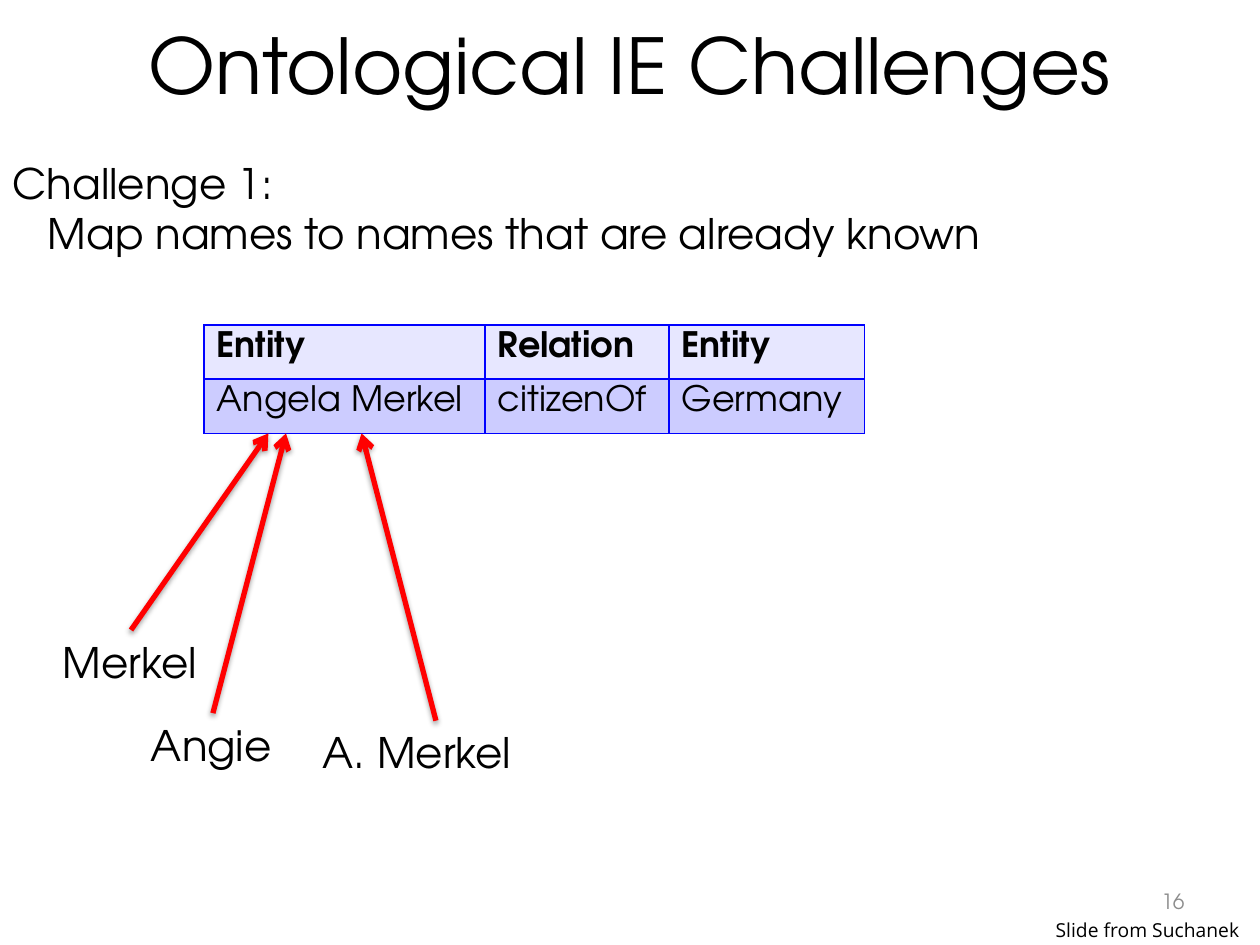
"""Build the slide about mapping names to known entities."""
from dataclasses import dataclass

from lxml.etree import SubElement
from pptx import Presentation
from pptx.dml.color import RGBColor
from pptx.enum.shapes import MSO_CONNECTOR as Connector
from pptx.enum.text import MSO_ANCHOR as Anchor, PP_ALIGN as Align
from pptx.oxml import parse_xml
from pptx.oxml.ns import nsdecls, qn
from pptx.util import Inches, Pt

BLACK = RGBColor(0x00, 0x00, 0x00)
GRAY = RGBColor(0x8C, 0x8C, 0x8C)
RED = RGBColor(0xFF, 0x00, 0x00)
BORDER_BLUE = RGBColor(0x00, 0x01, 0xFF)
HEADER_FILL = RGBColor(0xE7, 0xE7, 0xFF)
BODY_FILL = RGBColor(0xCC, 0xCC, 0xFF)
MAIN_FONT = "TeX Gyre Adventor"
CREDIT_FONT = "Open Sans"

ROWS = [("Entity", "Relation", "Entity"), ("Angela Merkel", "citizenOf", "Germany")]
COLUMN_WIDTHS = [2.23, 1.46, 1.55]
ROW_HEIGHT = 0.43
TABLE_LEFT, TABLE_TOP = 1.62, 2.58
ARROW_TIP_TOP = 3.44


@dataclass
class Label:
    text: str
    left: float
    top: float
    width: float
    height: float = 0.5
    size: int = 24
    font: str = MAIN_FONT
    color: RGBColor = BLACK
    align: Align = Align.LEFT
    anchor: Anchor = Anchor.TOP
    wrap: bool = False


@dataclass
class Arrow:
    start_x: float
    start_y: float
    tip_x: float


LABELS = [
    Label("A. Merkel", 2.46, 5.72, 2, wrap=True),
    Label("Angie", 1.1, 5.66, 1.17),
    Label("Merkel", 0.4, 5, 1.29),
    Label("16", 7.17, 6.95, 2.33, 0.4, 12, color=GRAY,
          align=Align.RIGHT, anchor=Anchor.MIDDLE, wrap=True),
    Label("Slide from Suchanek", 8.28, 7.24, 1.72, 0.29, 11, CREDIT_FONT),
]
ARROWS = [Arrow(3.46, 5.72, 2.87), Arrow(1.69, 5.66, 2.27), Arrow(1.04, 5, 2.13)]


def format_text(text_frame, size: int, font: str = MAIN_FONT,
                color: RGBColor = BLACK, bold: bool = False) -> None:
    for paragraph in text_frame.paragraphs:
        for run in paragraph.runs:
            run.font.size = Pt(size)
            run.font.name = font
            run.font.color.rgb = color
            run.font.bold = bold


def place(shape, left: float, top: float, width: float, height: float) -> None:
    shape.left, shape.top = Inches(left), Inches(top)
    shape.width, shape.height = Inches(width), Inches(height)


def fill_title(slide) -> None:
    title = slide.shapes.title
    place(title, 0.5, 0, 9, 1.01)
    title.text_frame.text = "Ontological IE Challenges"
    title.text_frame.vertical_anchor = Anchor.MIDDLE
    format_text(title.text_frame, 44)


def fill_challenge(slide) -> None:
    body = slide.placeholders[1]
    place(body, 0, 1.2, 10, 0.91)
    body.text_frame.text = "Challenge 1:\nMap names to names that are already known"
    for paragraph, margin in zip(body.text_frame.paragraphs, (0, 0.28)):
        paragraph.space_before = Pt(0)
        properties = paragraph._p.get_or_add_pPr()
        properties.set("marL", str(Inches(margin)))
        properties.set("indent", "0")
        SubElement(properties, qn("a:buNone"))
    format_text(body.text_frame, 24)


def add_borders(cell) -> None:
    properties = cell._tc.get_or_add_tcPr()
    for index, side in enumerate(("lnL", "lnR", "lnT", "lnB")):
        properties.insert(index, parse_xml(
            f'<a:{side} {nsdecls("a")} w="{Pt(1)}"><a:solidFill>'
            f'<a:srgbClr val="{BORDER_BLUE}"/></a:solidFill></a:{side}>'))


def add_facts_table(slide) -> None:
    table = slide.shapes.add_table(
        len(ROWS), len(COLUMN_WIDTHS), Inches(TABLE_LEFT), Inches(TABLE_TOP),
        Inches(sum(COLUMN_WIDTHS)), Inches(ROW_HEIGHT * len(ROWS))).table
    for column, width in zip(table.columns, COLUMN_WIDTHS):
        column.width = Inches(width)
    for row_index, texts in enumerate(ROWS):
        is_header = row_index == 0
        for column_index, text in enumerate(texts):
            cell = table.cell(row_index, column_index)
            cell.text_frame.text = text
            cell.fill.solid()
            cell.fill.fore_color.rgb = HEADER_FILL if is_header else BODY_FILL
            format_text(cell.text_frame, 20, bold=is_header)
            add_borders(cell)


def add_label(slide, label: Label) -> None:
    box = slide.shapes.add_textbox(Inches(label.left), Inches(label.top),
                                   Inches(label.width), Inches(label.height))
    text_frame = box.text_frame
    text_frame.text = label.text
    text_frame.word_wrap = label.wrap
    text_frame.vertical_anchor = label.anchor
    text_frame.paragraphs[0].alignment = label.align
    format_text(text_frame, label.size, label.font, label.color)


def add_arrow(slide, arrow: Arrow) -> None:
    connector = slide.shapes.add_connector(
        Connector.STRAIGHT, Inches(arrow.start_x), Inches(arrow.start_y),
        Inches(arrow.tip_x), Inches(ARROW_TIP_TOP))
    connector.line.color.rgb = RED
    connector.line.width = Pt(3)
    SubElement(connector.line._get_or_add_ln(), qn("a:tailEnd"), type="arrow")
    connector._element.spPr.append(parse_xml(
        f'<a:effectLst {nsdecls("a")}><a:outerShdw blurRad="{Pt(3.1)}" '
        f'dist="{Pt(1.6)}" dir="5400000" rotWithShape="0">'
        '<a:srgbClr val="000000"><a:alpha val="38000"/></a:srgbClr>'
        '</a:outerShdw></a:effectLst>'))


def main() -> None:
    presentation = Presentation()
    presentation.slide_width, presentation.slide_height = Inches(10), Inches(7.5)
    slide = presentation.slides.add_slide(presentation.slide_layouts[1])
    fill_title(slide)
    fill_challenge(slide)
    add_facts_table(slide)
    for label in LABELS:
        add_label(slide, label)
    for arrow in ARROWS:
        add_arrow(slide, arrow)
    presentation.save("out.pptx")


if __name__ == "__main__":
    main()
